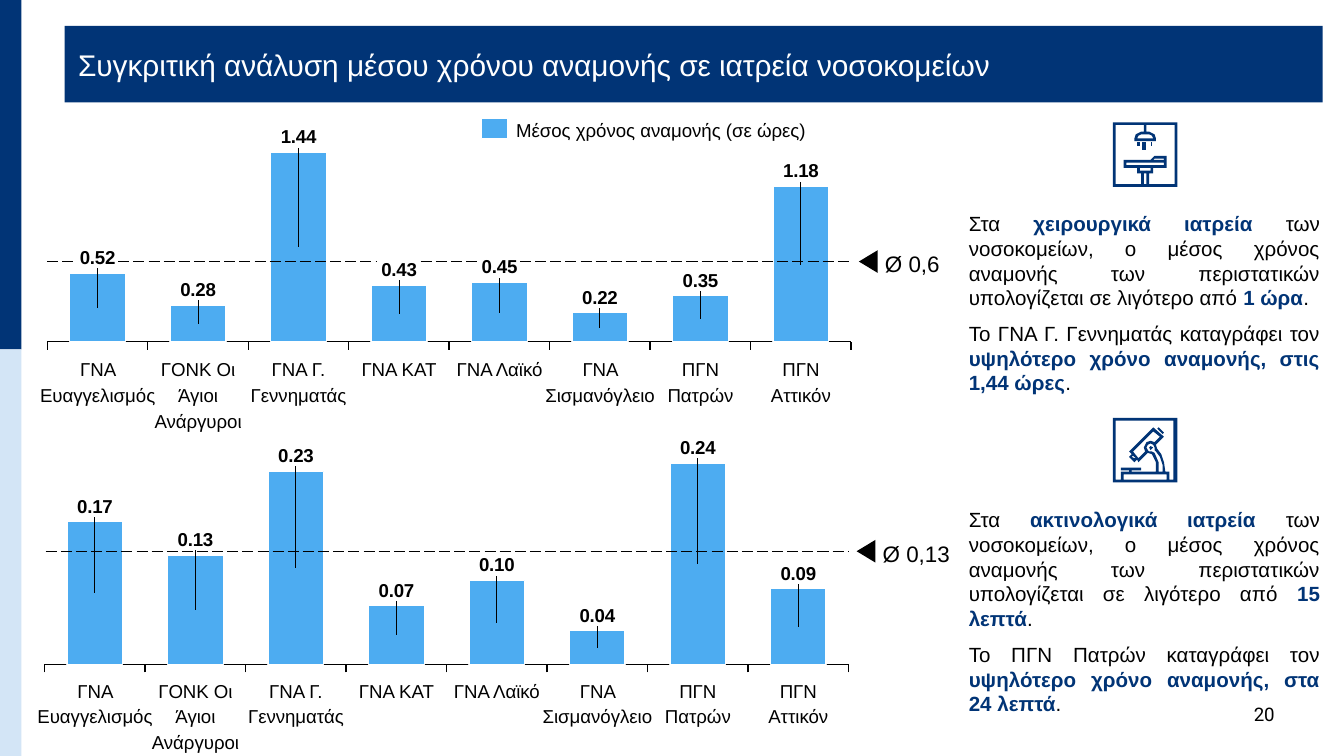
import pptx
import pptx.chart.data
import pptx.dml.color
import pptx.enum.chart
import pptx.enum.dml
import pptx.enum.shapes
import pptx.enum.text
import pptx.oxml
import pptx.oxml.ns
import pptx.util
from lxml import etree

Pt = pptx.util.Pt
ALIGN = pptx.enum.text.PP_ALIGN
ANCHOR = pptx.enum.text.MSO_ANCHOR
SHAPE = pptx.enum.shapes.MSO_SHAPE
qn = pptx.oxml.ns.qn

NAVY, PALE, BLUE, BLACK, WHITE = "013476", "D3E5F6", "4DACF1", "000000", "FFFFFF"
CHART_WIDTH, PLOT_X, PLOT_WIDTH = 443.5, 0.015, 0.971
HOSPITALS = [
    ("ΓΝΑ Ευαγγελισμός", 63, 2), ("ΓΟΝΚ Οι Άγιοι Ανάργυροι", 49, 3),
    ("ΓΝΑ Γ. Γεννηματάς", 53, 2), ("ΓΝΑ ΚΑΤ", 43, 1), ("ΓΝΑ Λαϊκό", 49, 1),
    ("ΓΝΑ Σισμανόγλειο", 60, 2), ("ΠΓΝ Πατρών", 37, 2), ("ΠΓΝ Αττικόν", 34, 2),
]


def color(hex_value):
    return pptx.dml.color.RGBColor.from_string(hex_value)


def add_text(paragraph, text, size=10, fill=BLACK, bold=False, font="Arial"):
    run = paragraph.add_run()
    run.text = text
    run.font.size, run.font.name, run.font.bold = Pt(size), font, bold
    run.font.color.rgb = color(fill)


def box(left, top, right, bottom):
    return [(left, top), (right, top), (right, bottom), (left, bottom)]


MICROSCOPE = [
    [
        box(0, 0, 48, 48),
        [(45, 46), (42, 46), (42, 40), (39, 40), (38, 33), (36, 27), (33, 23), (32, 20),
         (38, 14), (30, 7), (12, 25), (14, 27), (12, 29), (16, 33), (18, 31), (19, 33),
         (26, 26), (29, 27), (32, 33), (32, 40), (14, 40), (14, 39), (21, 39), (21, 37),
         (6, 37), (6, 39), (12, 39), (12, 40), (6, 40), (6, 46), (2, 46), (2, 2), (45, 2)],
        [(31, 26), (29, 25), (27, 25), (26, 24), (25, 22), (26, 20), (28, 19), (30, 20),
         (31, 22), (31, 24), (32, 25), (35, 29), (37, 35), (37, 40), (34, 40), (34, 33)],
        [(24, 25), (19, 30), (15, 25), (30, 10), (35, 14), (31, 18), (28, 17), (25, 18),
         (23, 22)],
        [(17, 30), (16, 30), (14, 29), (15, 28)],
        box(8, 42, 40, 46),
    ],
    [[(38, 11), (34, 7), (33, 8), (37, 12)]],
    [[(27, 22), (28, 21), (30, 22), (28, 24)]],
]
OPERATING_TABLE = [
    [
        box(0, 0, 48, 48),
        box(23, 38, 25, 46),
        box(10, 30, 38, 32),
        [(30, 28), (31, 27), (38, 27), (38, 28)],
        box(20, 34, 28, 36),
        [(46, 46), (27, 46), (27, 38), (30, 38), (30, 34), (40, 34), (40, 25), (31, 25),
         (28, 28), (8, 28), (8, 34), (18, 34), (18, 38), (21, 38), (21, 46), (2, 46),
         (2, 2), (23, 2), (23, 7), (21, 7), (17, 9), (16, 12), (16, 14), (32, 14),
         (32, 12), (31, 9), (27, 7), (25, 7), (25, 2), (46, 2)],
        [(27, 9), (29, 10), (30, 12), (18, 12), (19, 10), (21, 9)],
    ],
    [box(22, 15, 25, 21)],
    [box(18, 15, 20, 18)],
    [box(28, 15, 29, 18)],
]


class WaitingTimeSlide:
    def __init__(self, presentation):
        self.slide = presentation.slides.add_slide(presentation.slide_layouts[5])
        self.shapes = self.slide.shapes

    def paint(self, shape, fill, outline=None):
        shape.shadow.inherit = False
        shape.fill.solid()
        shape.fill.fore_color.rgb = color(fill)
        if outline:
            shape.line.color.rgb = color(outline)
            shape.line.width = Pt(0.75)
        else:
            shape.line.fill.background()

    def title(self, text, left, top, width, height):
        heading = self.shapes.title
        heading.left, heading.top, heading.width, heading.height = map(Pt, (left, top, width, height))
        heading.fill.solid()
        heading.fill.fore_color.rgb = color(NAVY)
        self.fill_frame(heading.text_frame, [[(text, False)]], 7.2, ANCHOR.MIDDLE,
                        ALIGN.LEFT, size=16, fill=WHITE)

    def fill_frame(self, frame, paragraphs, inset, anchor, align, spacing=None, after=0,
                   wrap=True, accent=None, **style):
        frame.auto_size = pptx.enum.text.MSO_AUTO_SIZE.NONE
        frame.word_wrap, frame.vertical_anchor = wrap, anchor
        frame.margin_left = frame.margin_right = frame.margin_top = frame.margin_bottom = Pt(inset)
        for index, segments in enumerate(paragraphs):
            paragraph = frame.add_paragraph() if index else frame.paragraphs[0]
            paragraph.alignment, paragraph.line_spacing = align, spacing
            paragraph.space_after = Pt(after)
            for words, strong in segments:
                run_style = dict(style, fill=accent, bold=True) if strong else style
                add_text(paragraph, words, **run_style)

    def text(self, paragraphs, left, top, width, height, inset=0, anchor=ANCHOR.MIDDLE,
             align=ALIGN.LEFT, **style):
        if isinstance(paragraphs, str):
            paragraphs = [[(paragraphs, False)]]
        holder = self.shapes.add_textbox(Pt(left), Pt(top), Pt(width), Pt(height))
        self.fill_frame(holder.text_frame, paragraphs, inset, anchor, align, **style)

    def block(self, left, top, width, height, fill, outline=None, kind=SHAPE.RECTANGLE):
        shape = self.shapes.add_shape(kind, Pt(left), Pt(top), Pt(width), Pt(height))
        self.paint(shape, fill, outline)
        return shape

    def average(self, text, left, line_y, width, spans):
        pointer = self.block(left, line_y - 6.2, 10.1, 12.2, BLACK, kind=SHAPE.RIGHT_ARROW)
        pointer.adjustments[0] = pointer.adjustments[1] = 1
        pointer.rotation = 180
        for start, end in spans:
            line = self.shapes.add_connector(pptx.enum.shapes.MSO_CONNECTOR.STRAIGHT,
                                             Pt(start), Pt(line_y), Pt(end), Pt(line_y))
            line.line.color.rgb = color(BLACK)
            line.line.width = Pt(0.75)
            line.line.dash_style = pptx.enum.dml.MSO_LINE.LONG_DASH
            etree.SubElement(line._element.spPr, qn("a:effectLst"))
        self.text(text, left + 14, line_y - 8.3, width, 16.6, spacing=1.15, wrap=False, size=12)

    def layout_xml(self, **values):
        layout = etree.Element(qn("c:layout"))
        manual = etree.SubElement(layout, qn("c:manualLayout"))
        for tag, value in values.items():
            etree.SubElement(manual, qn("c:" + tag)).set("val", str(value))
        return layout

    def chart(self, hours, left, top, height, plot_y, plot_height):
        data = pptx.chart.data.CategoryChartData(number_format="0.00")
        data.categories = [str(number + 1) for number in range(len(hours))]
        data.add_series("Series 1", hours)
        chart = self.shapes.add_chart(pptx.enum.chart.XL_CHART_TYPE.COLUMN_STACKED, Pt(left),
                                      Pt(top), Pt(CHART_WIDTH), Pt(height), data).chart
        chart.has_legend = chart.has_title = False
        chart.font.size, chart.font.name = Pt(10), "Arial"
        chart.font.color.rgb = color(BLACK)
        values, categories = chart.value_axis, chart.category_axis
        values.minimum_scale, values.maximum_scale = 0, max(hours)
        values.has_major_gridlines = values.visible = False
        categories.tick_label_position = pptx.enum.chart.XL_TICK_LABEL_POSITION.NONE
        categories.major_tick_mark = pptx.enum.chart.XL_TICK_MARK.OUTSIDE
        categories.format.line.color.rgb = color(BLACK)
        categories.format.line.width = Pt(0.75)
        plot = chart.plots[0]
        plot.gap_width, plot.overlap, plot.vary_by_categories = 80, 100, False
        series = plot.series[0]
        self.paint_series(series)
        for index, hour in enumerate(hours):
            font = series.points[index].data_label.font
            font.size, font.name, font.bold = Pt(10), "Arial", True
            font.color.rgb = color(BLACK)
            lift = hour / max(hours) * plot_height / 2 + 8 / height
            label = series._element.findall(".//" + qn("c:dLbl"))[index]
            label.insert(1, self.layout_xml(x=0, y=round(-lift, 4)))
        area = chart._chartSpace.find(".//" + qn("c:plotArea"))
        for old_layout in area.findall(qn("c:layout")):
            area.remove(old_layout)
        area.insert(0, self.layout_xml(layoutTarget="inner", xMode="edge", yMode="edge",
                                       x=PLOT_X, y=plot_y, w=PLOT_WIDTH, h=plot_height))

    def paint_series(self, series):
        series.format.fill.solid()
        series.format.fill.fore_color.rgb = color(BLUE)
        series.format.line.color.rgb = color(WHITE)
        series.format.line.width = Pt(0.75)

    def hospital_names(self, chart_left, top):
        step = CHART_WIDTH * PLOT_WIDTH / len(HOSPITALS)
        for index, (name, width, lines) in enumerate(HOSPITALS):
            center = chart_left + CHART_WIDTH * PLOT_X + step * (index + 0.5)
            self.text(name, center - width / 2, top, width, 13.7 * lines, anchor=ANCHOR.TOP,
                      align=ALIGN.CENTER, spacing=1.15, wrap=lines > 1)

    def finding(self, clinics, duration, hospital, record, top, height):
        self.text([
            [("Στα ", False), (clinics + " ", True),
             ("των νοσοκομείων, ο μέσος χρόνος αναμονής των περιστατικών "
              "υπολογίζεται σε λιγότερο από ", False), (duration, True), (". ", False)],
            [(f"Το {hospital} καταγράφει τον ", False),
             (f"υψηλότερο χρόνο αναμονής, {record}", True), (".", False)],
        ], 511.9, top, 202.3, height, inset=7.2, align=ALIGN.JUSTIFY, after=6, size=11, accent=NAVY)

    def icon(self, parts, left, top):
        group = self.shapes.add_group_shape()
        for contours in parts:
            builder = group.shapes.build_freeform(*contours[0][0], scale=Pt(0.72))
            for index, contour in enumerate(contours):
                if index:
                    builder.move_to(*contour[0])
                builder.add_line_segments(contour[1:], close=True)
            self.paint(builder.convert_to_shape(Pt(left), Pt(top)), NAVY)


def main():
    presentation = pptx.Presentation()
    presentation.slide_width, presentation.slide_height = Pt(720), Pt(405)
    page = WaitingTimeSlide(presentation)
    page.block(0, 0, 11.5, 187.2, NAVY)
    page.block(0, 187.2, 11.5, 217.8, PALE)
    page.text("20", 664.6, 372.2, 41, 20.2, inset=7.2, font="Roboto")
    page.title("Συγκριτική ανάλυση μέσου χρόνου αναμονής σε ιατρεία νοσοκομείων", 34.6, 13.9, 673.9, 41)

    page.chart([0.52, 0.28, 1.44, 0.43, 0.45, 0.22, 0.35, 1.18], 18.7, 56.2, 144.7, 0.176, 0.701)
    page.average("Ø 0,6", 460.1, 140.2, 29.5,
                 [(25.2, 40.3), (63.4, 201.6), (225.4, 255.6), (278.6, 455.8)])
    page.hospital_names(18.7, 190.1)
    page.block(257.8, 63.4, 14.4, 10.8, BLUE, outline=WHITE)
    page.text("Μέσος χρόνος αναμονής (σε ώρες)", 276.5, 61.9, 155.5, 13.7, spacing=1.15, wrap=False)

    page.chart([0.17, 0.13, 0.23, 0.07, 0.1, 0.04, 0.24, 0.09], 17.3, 222.5, 151.2, 0.169, 0.714)
    page.average("Ø 0,13", 458.9, 295.4, 36, [(24.5, 455)])
    page.hospital_names(17.3, 362.2)

    page.finding("χειρουργικά ιατρεία", "1 ώρα", "ΓΝΑ Γ. Γεννηματάς", "στις 1,44 ώρες", 107.3, 110.2)
    page.finding("ακτινολογικά ιατρεία", "15 λεπτά", "ΠΓΝ Πατρών", "στα 24 λεπτά", 265, 125.3)
    page.icon(MICROSCOPE, 596.2, 223.9)
    page.icon(OPERATING_TABLE, 596.2, 65.5)
    presentation.save("out.pptx")


if __name__ == "__main__":
    main()
